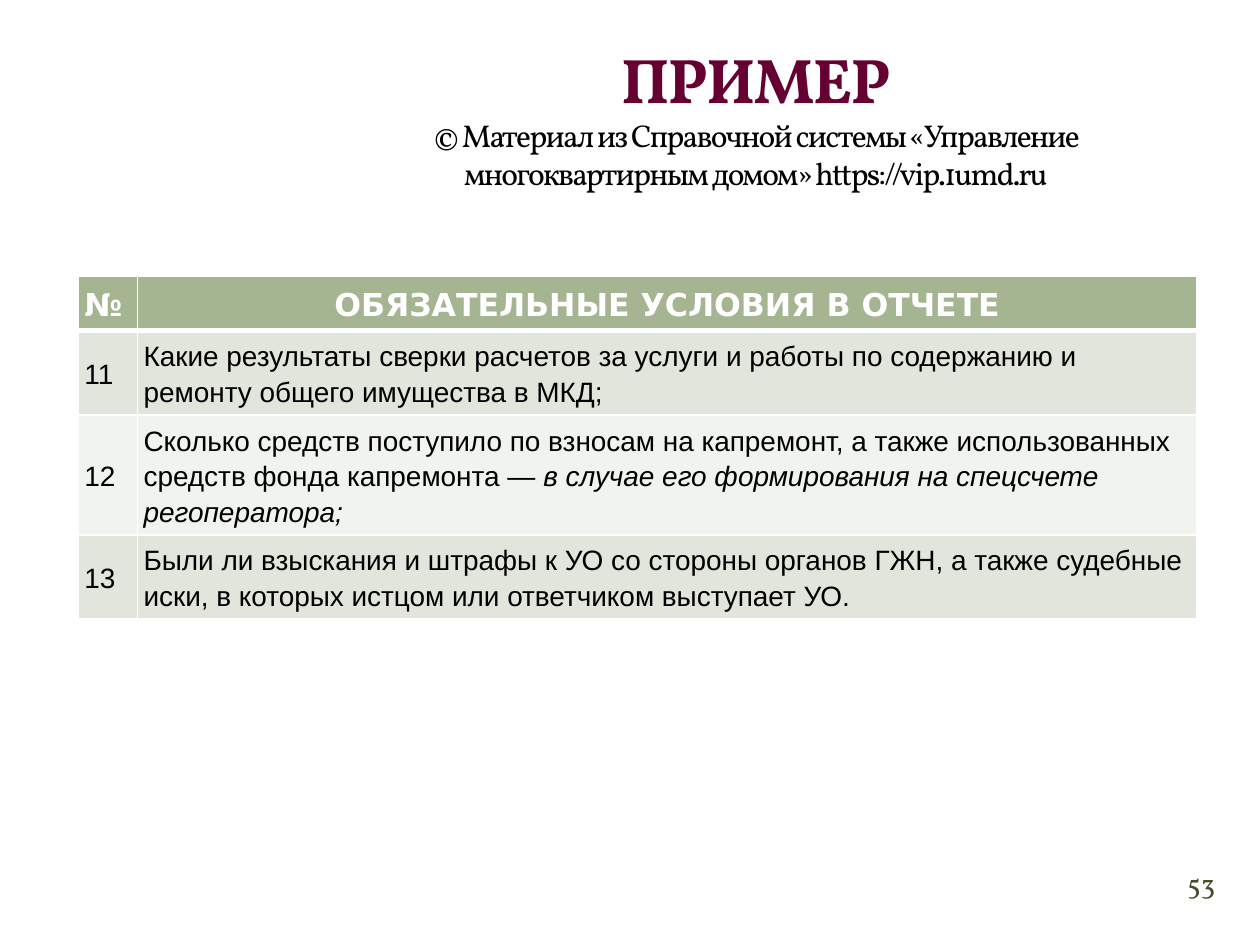
from lxml import etree
from pptx import Presentation
from pptx import util as u
from pptx.dml.color import RGBColor
from pptx.enum import text
from pptx.oxml.ns import qn

COLORS = {"title": "660033", "body": "000000", "header": "A5B592", "odd": "E1E5DC",
          "even": "F0F3EE", "white": "FFFFFF", "number": "444D26"}
TITLE = "ПРИМЕР"
CREDIT = "© Материал из Справочной системы «Управление многоквартирным домом» https://vip.1umd.ru"
SLIDE_NUMBER = "53"
HEADER = ("№", "ОБЯЗАТЕЛЬНЫЕ УСЛОВИЯ В ОТЧЕТЕ")
CONDITIONS = [
    ("11", "Какие результаты сверки расчетов за услуги и работы по содержанию и ремонту "
           "общего имущества в МКД;", ""),
    ("12", "Сколько средств поступило по взносам на капремонт, а также использованных средств "
           "фонда капремонта — ", "в случае его формирования на спецсчете регоператора;"),
    ("13", "Были ли взыскания и штрафы к УО со стороны органов ГЖН, а также судебные иски, "
           "в которых истцом или ответчиком выступает УО.", ""),
]
COLUMN_WIDTHS = (0.47, 8.41)
ROW_HEIGHT = 0.41


def add_run(paragraph, words, font, size, color, bold=False, italic=False):
    """Append a formatted run to a paragraph."""
    run = paragraph.add_run()
    run.text = words
    run.font.name, run.font.size = font, u.Pt(size)
    run.font.bold, run.font.italic = bold, italic
    run.font.color.rgb = RGBColor.from_string(COLORS[color])
    return run


def set_borders(cell, bottom):
    """Draw white borders round a cell, with the given bottom width in points."""
    properties = cell._tc.get_or_add_tcPr()
    for index, (side, width) in enumerate((("L", 1), ("R", 1), ("T", 1), ("B", bottom))):
        line = etree.Element(qn(f"a:ln{side}"), w=str(u.Pt(width)))
        fill = etree.SubElement(line, qn("a:solidFill"))
        etree.SubElement(fill, qn("a:srgbClr"), val=COLORS["white"])
        properties.insert(index, line)


def format_cell(cell, fill, bottom=1):
    """Set the fill, borders, margins and spacing of a cell and return its paragraph."""
    cell.fill.solid()
    cell.fill.fore_color.rgb = RGBColor.from_string(COLORS[fill])
    set_borders(cell, bottom)
    cell.margin_left = cell.margin_right = cell.margin_top = cell.margin_bottom = u.Inches(0.05)
    cell.vertical_anchor = text.MSO_ANCHOR.MIDDLE
    paragraph = cell.text_frame.paragraphs[0]
    paragraph.line_spacing = 1.15
    return paragraph


def add_conditions(slide):
    """Add the table of report conditions."""
    rows = len(CONDITIONS) + 1
    table = slide.shapes.add_table(
        rows, len(HEADER), u.Inches(0.62), u.Inches(2.19),
        u.Inches(sum(COLUMN_WIDTHS)), u.Inches(ROW_HEIGHT * rows)).table
    for column, width in zip(table.columns, COLUMN_WIDTHS):
        column.width = u.Inches(width)
    for index, label in enumerate(HEADER):
        paragraph = format_cell(table.cell(0, index), "header", bottom=3)
        add_run(paragraph, label, "DejaVu Sans", 18, "white", bold=True)
    paragraph.alignment = text.PP_ALIGN.CENTER
    for row, (number, condition, remark) in enumerate(CONDITIONS, 1):
        fill = "odd" if row % 2 else "even"
        add_run(format_cell(table.cell(row, 0), fill), number, "Arial", 16, "body")
        paragraph = format_cell(table.cell(row, 1), fill)
        add_run(paragraph, condition, "Arial", 16, "body")
        if remark:
            add_run(paragraph, remark, "Arial", 16, "body", italic=True)


def add_title(slide):
    """Fill and place the title placeholder."""
    title = slide.shapes.title
    title.left, title.top = u.Inches(2.5), u.Inches(0.17)
    title.width, title.height = u.Inches(7), u.Inches(1.4)
    frame = title.text_frame
    frame.auto_size = text.MSO_AUTO_SIZE.NONE
    frame.vertical_anchor = text.MSO_ANCHOR.BOTTOM
    paragraph = frame.paragraphs[0]
    paragraph.alignment = text.PP_ALIGN.CENTER
    heading = add_run(paragraph, TITLE, "Vollkorn", 36, "title", bold=True)
    paragraph.add_line_break()
    credit = add_run(paragraph, CREDIT, "Vollkorn", 18, "body")
    for run in (heading, credit):
        run.font._element.set("spc", "-100")


def add_slide_number(slide):
    """Add the slide number in the lower right corner."""
    box = slide.shapes.add_textbox(u.Inches(9.2), u.Inches(6.76), u.Inches(0.67), u.Inches(0.5))
    frame = box.text_frame
    frame.word_wrap = True
    frame.margin_left = frame.margin_right = frame.margin_top = frame.margin_bottom = 0
    frame.vertical_anchor = text.MSO_ANCHOR.MIDDLE
    paragraph = frame.paragraphs[0]
    paragraph.alignment = text.PP_ALIGN.CENTER
    add_run(paragraph, SLIDE_NUMBER, "Vollkorn", 16, "number")


def main():
    """Build the slide and save it."""
    presentation = Presentation()
    presentation.slide_width, presentation.slide_height = u.Inches(10), u.Inches(7.5)
    slide = presentation.slides.add_slide(presentation.slide_layouts[5])
    add_conditions(slide)
    add_slide_number(slide)
    add_title(slide)
    presentation.save("out.pptx")


if __name__ == "__main__":
    main()
